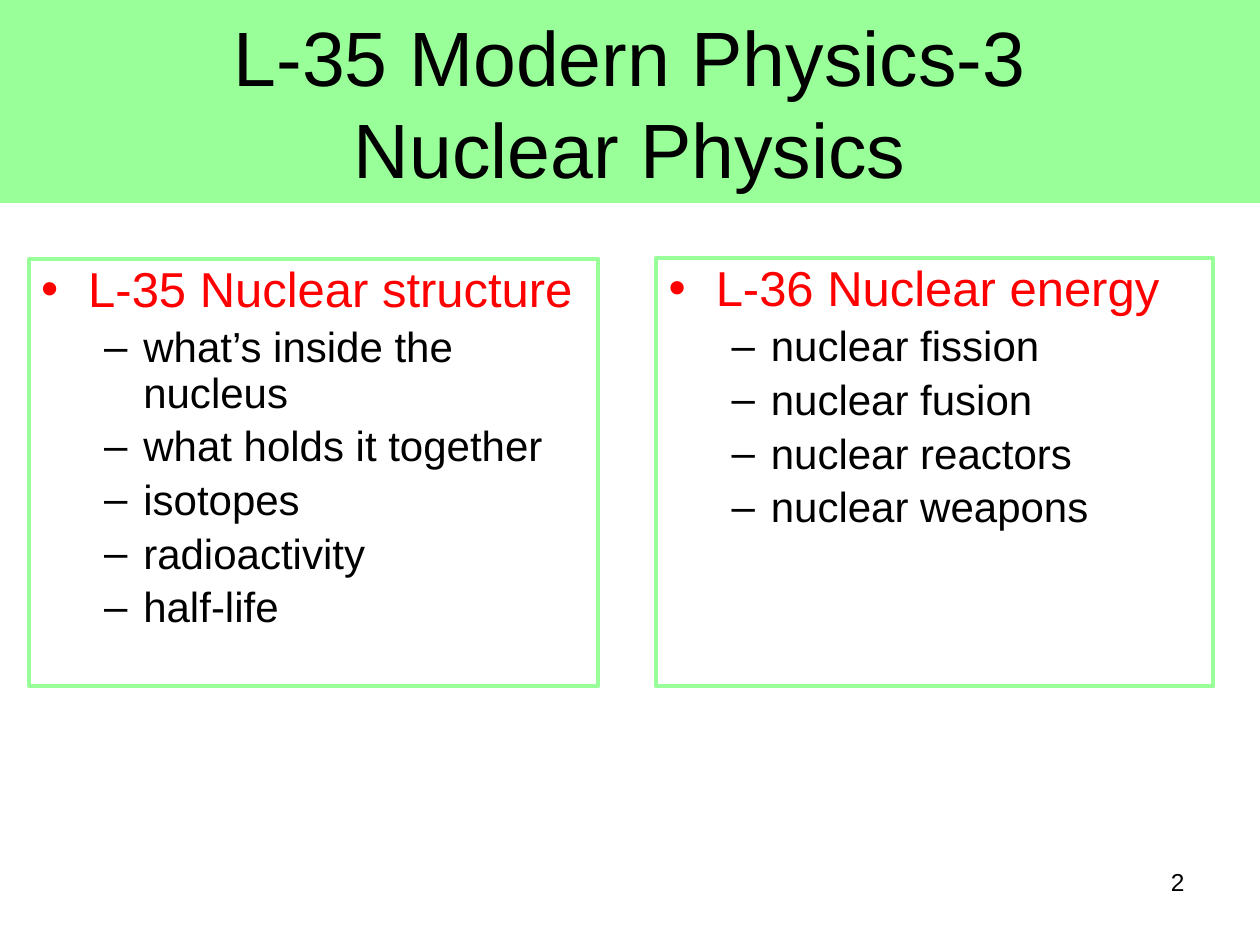
from lxml.etree import SubElement as Sub
from pptx import Presentation
from pptx.dml.color import RGBColor as Rgb
from pptx.enum.shapes import MSO_SHAPE as Kind
from pptx.enum.text import MSO_ANCHOR as Anchor, PP_ALIGN as Align
from pptx.oxml.ns import qn
from pptx.util import Cm, Pt

HUES = {"green": "99FF99", "red": "FF0000", "black": "000000"}
HEAD = {"level": 0, "size": 28, "hue": "red", "mark": "•", "left": 0.95, "hang": 0.95}
ITEM = {"level": 1, "size": 24, "hue": "black", "mark": "–", "left": 2.06, "hang": 0.79}


def paint(para, size, hue="black"):
    """Format every run of a paragraph."""
    look = {"name": "Arial", "size": Pt(size)}
    for run in para.runs:
        for key, val in look.items():
            setattr(run.font, key, val)
        run.font.color.rgb = Rgb.from_string(HUES[hue])


def add_box(slide, box, anchor):
    """Add a plain rectangle whose text wraps."""
    shape = slide.shapes.add_shape(Kind.RECTANGLE, *map(Cm, box))
    shape.shadow.inherit = False
    frame = shape.text_frame
    for key, val in {"word_wrap": True, "vertical_anchor": anchor}.items():
        setattr(frame, key, val)
    return shape


def add_title(slide, box, text):
    """Add the filled title band."""
    band = add_box(slide, box, Anchor.MIDDLE)
    band.fill.solid()
    band.fill.fore_color.rgb = Rgb.from_string(HUES["green"])
    band.line.fill.background()
    para = band.text_frame.paragraphs[0]
    para.text = text
    para.alignment = Align.CENTER
    paint(para, 44)


def add_point(para, text, form):
    """Fill one bulleted paragraph."""
    para.text = text
    look = {"level": form["level"], "alignment": Align.LEFT, "line_spacing": 0.9,
            "space_before": Pt(form["size"] * 0.2)}
    for key, val in look.items():
        setattr(para, key, val)
    paint(para, form["size"], form["hue"])
    props = para._p.get_or_add_pPr()
    props.set("marL", str(Cm(form["left"])))
    props.set("indent", str(-Cm(form["hang"])))
    Sub(props, qn("a:buFont"), typeface="Arial")
    Sub(props, qn("a:buChar"), char=form["mark"])


def add_panel(slide, box, head, items):
    """Add an outlined panel with a heading and its points."""
    panel = add_box(slide, box, Anchor.TOP)
    panel.fill.background()
    panel.line.color.rgb = Rgb.from_string(HUES["green"])
    panel.line.width = Pt(2.25)
    frame = panel.text_frame
    add_point(frame.paragraphs[0], head, HEAD)
    for item in items:
        add_point(frame.add_paragraph(), item, ITEM)


def add_number(slide, box, text):
    """Add the page number."""
    frame = slide.shapes.add_textbox(*map(Cm, box)).text_frame
    frame.word_wrap = True
    para = frame.paragraphs[0]
    para.text = text
    para.alignment = Align.RIGHT
    paint(para, 14)


def main():
    """Build and save the slide."""
    deck = Presentation()
    deck.slide_width, deck.slide_height = Cm(25.4), Cm(19.05)
    slide = deck.slides.add_slide(deck.slide_layouts[6])
    add_title(slide, (0, 0, 25.4, 4.09), "L-35 Modern Physics-3\nNuclear Physics")
    add_panel(slide, (0.58, 5.22, 11.48, 8.61), "L-35 Nuclear structure",
              ["what’s inside the nucleus", "what holds it together",
               "isotopes", "radioactivity", "half-life"])
    add_panel(slide, (13.23, 5.2, 11.23, 8.64), "L-36 Nuclear energy",
              ["nuclear fission", "nuclear fusion",
               "nuclear reactors", "nuclear weapons"])
    add_number(slide, (18.21, 17.35, 5.92, 1.32), "2")
    deck.save("out.pptx")


if __name__ == "__main__":
    main()
